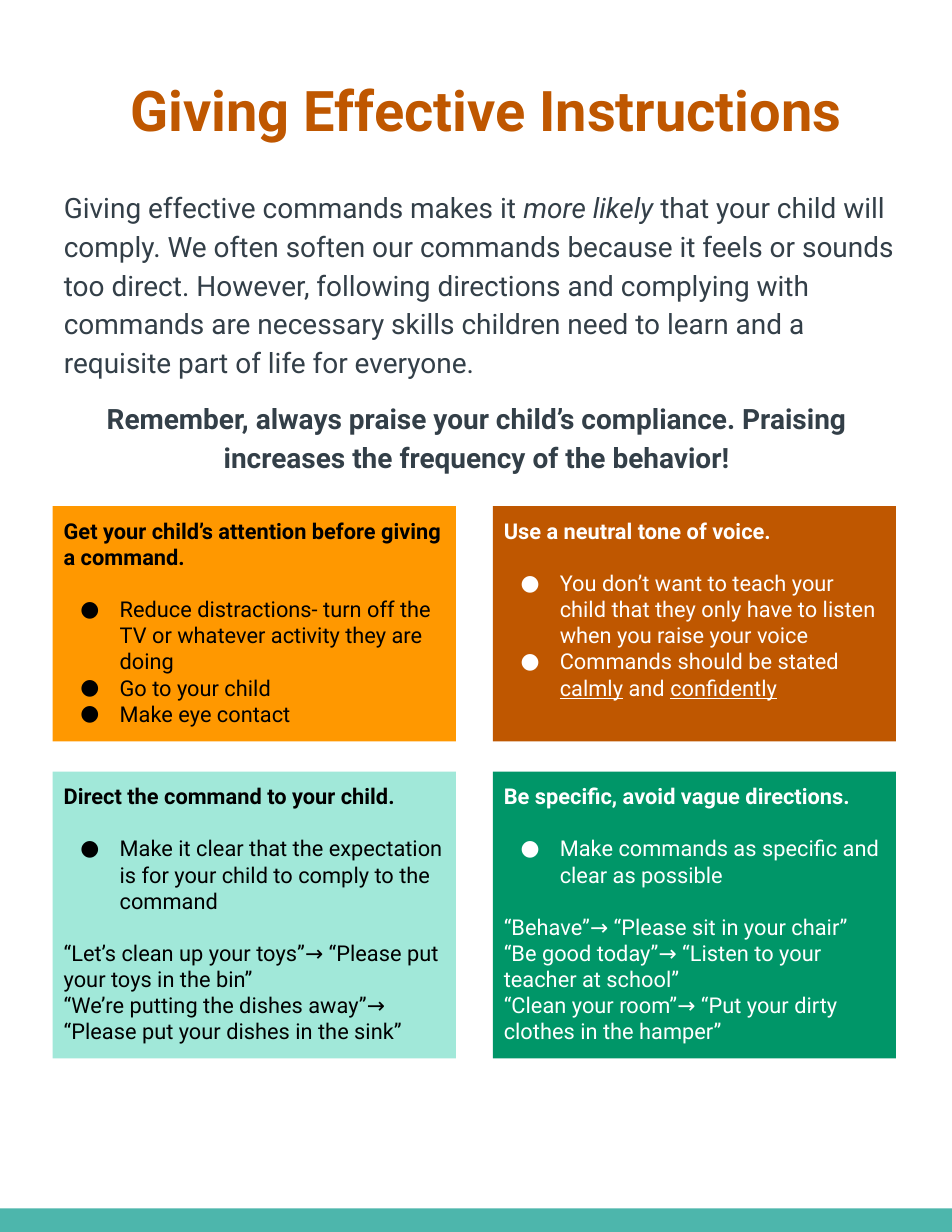
from lxml import etree
from pptx import Presentation
from pptx import util as u
from pptx.dml.color import RGBColor
from pptx.enum import shapes, text
from pptx.oxml.ns import qn

COLORS = {
    "teal": "4DB6AC", "rust": "BF5700", "slate": "333F48", "green": "009668",
    "orange": "FF9800", "mint": "A1E8D9", "white": "FFFFFF", "black": "000000",
}


def style(paragraph, size, color, bold=False):
    font = paragraph.font
    font.name = "Roboto"
    font.size = u.Pt(size)
    font.bold = bold
    font.color.rgb = RGBColor.from_string(COLORS[color])


def frame_text(shape, left, top, width, height):
    shape.left, shape.top = u.Inches(left), u.Inches(top)
    shape.width, shape.height = u.Inches(width), u.Inches(height)
    frame = shape.text_frame
    frame.word_wrap = True
    frame.auto_size = text.MSO_AUTO_SIZE.NONE
    frame.vertical_anchor = text.MSO_ANCHOR.TOP
    frame.margin_left = frame.margin_right = u.Inches(0.1)
    frame.margin_top = frame.margin_bottom = u.Inches(0.1)
    return frame


presentation = Presentation()
presentation.slide_width = u.Inches(8.5)
presentation.slide_height = u.Inches(11)
slide = presentation.slides.add_slide(presentation.slide_layouts[1])

footer_bar = slide.shapes.add_shape(
    shapes.MSO_SHAPE.RECTANGLE, 0, u.Inches(10.79), u.Inches(8.5), u.Inches(0.21))
footer_bar.shadow.inherit = False
footer_bar.fill.solid()
footer_bar.fill.fore_color.rgb = RGBColor.from_string(COLORS["teal"])
footer_bar.line.fill.background()

title = frame_text(slide.shapes.title, 0.77, 0.57, 7.14, 0.82).paragraphs[0]
title.text = "Giving Effective Instructions"
title.alignment = text.PP_ALIGN.CENTER
style(title, 36, "rust", True)

intro = frame_text(slide.placeholders[1], 0.47, 1.56, 7.74, 1.88).paragraphs[0]
intro_parts = [
    "Giving effective commands makes it ",
    "more likely ",
    "that your child will comply. We often soften our commands because it feels or "
    "sounds too direct. However, following directions and complying with commands are "
    "necessary skills children need to learn and a requisite part of life for everyone.",
]
for index, part in enumerate(intro_parts):
    run = intro.add_run()
    run.text = part
    if index == 1:
        run.font.italic = True
intro_properties = intro._p.get_or_add_pPr()
intro_properties.set("marL", "0")
intro_properties.set("indent", "0")
etree.SubElement(intro_properties, qn("a:buNone"))
intro.line_spacing = 1.15
intro.space_before = u.Pt(0)
style(intro, 18, "slate")

reminder_box = slide.shapes.add_textbox(0, 0, 0, 0)
reminder = frame_text(reminder_box, 0.3, 3.44, 7.91, 0.82).paragraphs[0]
reminder.text = ("Remember, always praise your child’s compliance. "
                 "Praising increases the frequency of the behavior!")
reminder.alignment = text.PP_ALIGN.CENTER
reminder.line_spacing = 1.15
style(reminder, 18, "slate", True)

columns = [0.47, 4.4]
rows = [(4.52, 2.1), (6.89, 2.56)]
cards = [
    ("orange", "black", "Get your child’s attention before giving a command.",
     ["Reduce distractions- turn off the TV or whatever activity they are doing",
      "Go to your child", "Make eye contact"], []),
    ("rust", "white", "Use a neutral tone of voice.",
     ["You don’t want to teach your child that they only have to listen "
      "when you raise your voice",
      "Commands should be stated _calmly_ and _confidently_"], []),
    ("mint", "black", "Direct the command to your child.",
     ["Make it clear that the expectation is for your child to comply to the command"],
     ["“Let’s clean up your toys”→ “Please put your toys in the bin”",
      "“We’re putting the dishes away”→ “Please put your dishes in the sink”"]),
    ("green", "white", "Be specific, avoid vague directions.",
     ["Make commands as specific and clear as possible"],
     ["“Behave”→ “Please sit in your chair”",
      "“Be good today”→ “Listen to your teacher at school”",
      "“Clean your room”→ “Put your dirty clothes in the hamper”"]),
]
for index, (fill, ink, heading, bullets, examples) in enumerate(cards):
    left = columns[index % 2]
    top, height = rows[index // 2]
    card = slide.shapes.add_shape(shapes.MSO_SHAPE.RECTANGLE, 0, 0, 0, 0)
    card.shadow.inherit = False
    card.fill.solid()
    card.fill.fore_color.rgb = RGBColor.from_string(COLORS[fill])
    card.line.fill.background()
    frame = frame_text(card, left, top, 3.6, height)

    for group, lines in enumerate([[heading], bullets, examples]):
        for position, line in enumerate(lines):
            paragraph = frame.add_paragraph() if group else frame.paragraphs[0]
            for number, part in enumerate(line.split("_")):
                if part:
                    run = paragraph.add_run()
                    run.text = part
                    if number % 2:
                        run.font.underline = True
            paragraph.alignment = text.PP_ALIGN.LEFT
            if group == 1:
                properties = paragraph._p.get_or_add_pPr()
                properties.set("marL", str(u.Inches(0.5)))
                properties.set("indent", str(u.Inches(-0.35)))
                bullet_color = etree.SubElement(properties, qn("a:buClr"))
                etree.SubElement(bullet_color, qn("a:srgbClr"), val=COLORS[ink])
                etree.SubElement(properties, qn("a:buFont"), typeface="Roboto")
                etree.SubElement(properties, qn("a:buChar"), char="●")
            if group and position == 0:
                paragraph.space_before = u.Pt(16.8)
            style(paragraph, 14, ink, group == 0)

presentation.save("out.pptx")
